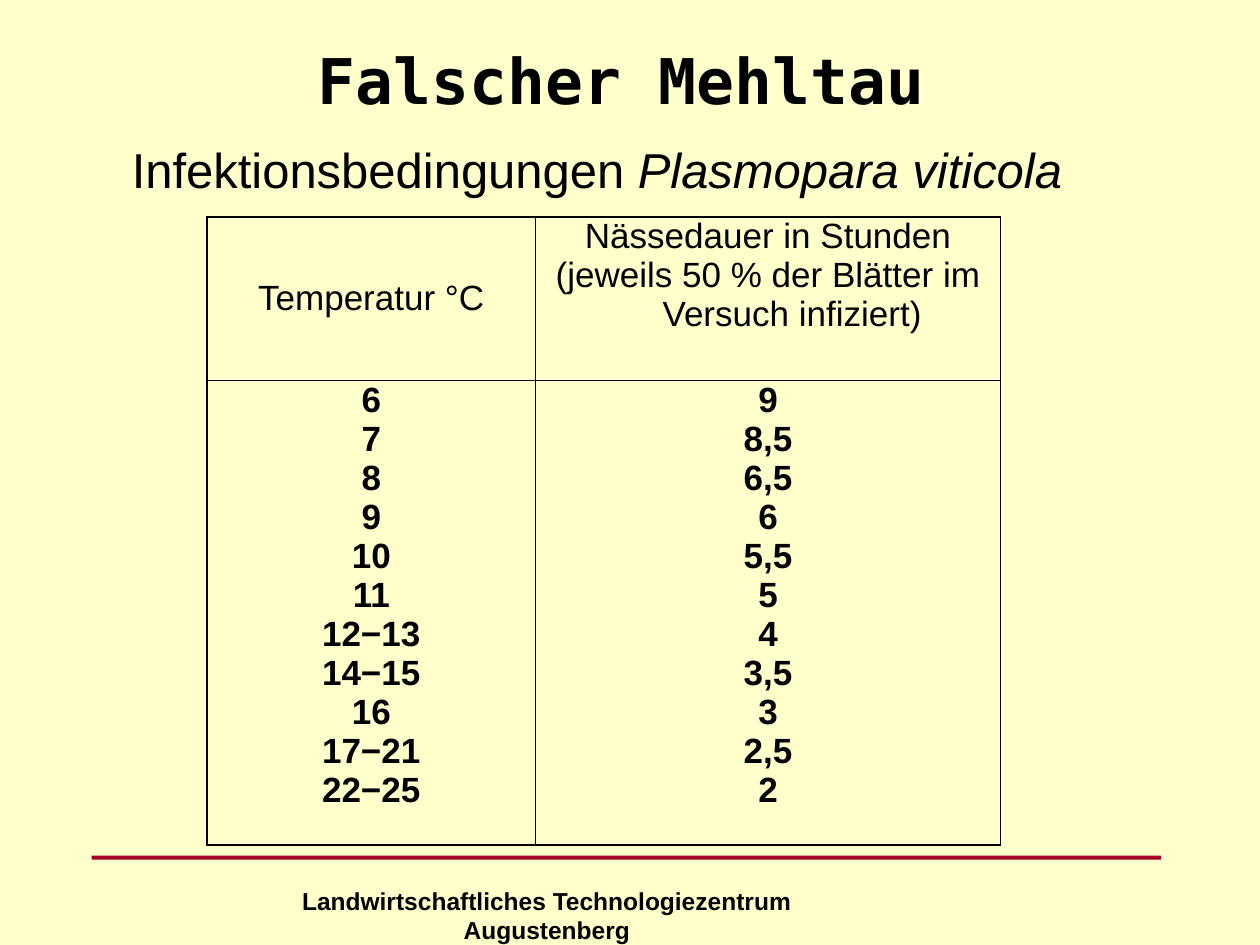
from lxml.etree import SubElement
from pptx import Presentation
from pptx.dml.color import RGBColor
from pptx.enum.shapes import MSO_SHAPE
from pptx.enum.text import MSO_ANCHOR, PP_ALIGN
from pptx.oxml import parse_xml
from pptx.oxml.ns import nsdecls
from pptx.util import Cm, Pt

COLORS = {"back": "FFFFCC", "rule": "A50021", "ink": "000000"}

TITLE = "Falscher Mehltau"
TOPIC = [("Infektionsbedingungen ", {}), ("Plasmopara viticola ", {"italic": True})]
FOOTER = "Landwirtschaftliches Technologiezentrum Augustenberg"
HEADS = [
    ["Temperatur °C"],
    ["Nässedauer in Stunden", "(jeweils 50 % der Blätter im Versuch infiziert)"],
]
DATA = [
    ("6", "9"), ("7", "8,5"), ("8", "6,5"), ("9", "6"), ("10", "5,5"), ("11", "5"),
    ("12−13", "4"), ("14−15", "3,5"), ("16", "3"), ("17−21", "2,5"), ("22−25", "2"),
]

# left, top, width, height in cm
PLACES = {
    "rule": (1.85, 17.25, 21.56, 0.08),
    "footer": (5.84, 17.73, 13.82, 0.84),
    "table": (4.17, 4.37, 16, 12.67),
    "topic": (1.17, 2.69, 22, 1.45),
    "title": (1.7, 0, 21.64, 3.2),
}
COLS = (6.63, 9.37)
ROWS = (3.3, 9.37)
HANG = Cm(0.97)

FORMATS = {
    "title": {"name": "DejaVu Sans Mono", "size": Pt(36), "bold": True},
    "topic": {"name": "Arial", "size": Pt(28), "bold": False},
    "head": {"name": "Arial", "size": Pt(20), "bold": False},
    "data": {"name": "Arial", "size": Pt(20), "bold": True},
    "footer": {"name": "Arial", "size": Pt(14), "bold": True},
}
NO_INSET = {f"margin_{side}": 0 for side in ("left", "top", "right", "bottom")}


def put(target, values):
    for name, value in values.items():
        setattr(target, name, value)


def place(name):
    return [Cm(n) for n in PLACES[name]]


def color(name):
    return RGBColor.from_string(COLORS[name])


def write(para, runs, style):
    para.alignment = PP_ALIGN.CENTER
    for text, extra in runs:
        run = para.add_run()
        run.text = text
        put(run.font, FORMATS[style] | extra)
        run.font.color.rgb = color("ink")


def add_text(slide, name, runs, **frame):
    box = slide.shapes.add_textbox(*place(name)).text_frame
    put(box, {"word_wrap": True} | frame)
    write(box.paragraphs[0], runs, name)


def frame_cell(cell):
    """Clear the fill and draw a thin line on all four sides."""
    cell.fill.background()
    props = cell._tc.get_or_add_tcPr()
    for spot, side in enumerate("LRTB"):
        props.insert(spot, parse_xml(
            f'<a:ln{side} {nsdecls("a")} w="{Pt(1)}"><a:solidFill>'
            f'<a:srgbClr val="{COLORS["ink"]}"/></a:solidFill></a:ln{side}>'))


def fill_cell(cell, lines, style):
    put(cell, NO_INSET)
    frame_cell(cell)
    text = cell.text_frame
    for spot, line in enumerate(lines):
        para = text.add_paragraph() if spot else text.paragraphs[0]
        props = para._p.get_or_add_pPr()
        props.set("marL", str(HANG))
        props.set("indent", str(-HANG))
        write(para, [(line, {})], style)


def add_grid(slide):
    grid = slide.shapes.add_table(len(ROWS), len(COLS), *place("table")).table
    put(grid, {"first_row": False, "horz_banding": False})
    for row, high in zip(grid.rows, ROWS):
        row.height = Cm(high)
    for col, wide in zip(grid.columns, COLS):
        col.width = Cm(wide)
    for col, (head, data) in enumerate(zip(HEADS, zip(*DATA))):
        fill_cell(grid.cell(0, col), head, "head")
        fill_cell(grid.cell(1, col), data, "data")
    grid.cell(0, 0).vertical_anchor = MSO_ANCHOR.MIDDLE


def main():
    deck = Presentation()
    put(deck, {"slide_width": Cm(25.4), "slide_height": Cm(19.05)})
    slide = deck.slides.add_slide(deck.slide_layouts[6])
    back = slide.background.fill
    back.solid()
    back.fore_color.rgb = color("back")

    rule = slide.shapes.add_shape(MSO_SHAPE.RECTANGLE, *place("rule"))
    rule.shadow.inherit = False
    rule.fill.solid()
    rule.fill.fore_color.rgb = color("rule")
    rule.line.fill.background()

    add_text(slide, "footer", [(FOOTER, {})], margin_left=0, margin_right=Cm(3.45))
    add_grid(slide)
    add_text(slide, "topic", TOPIC)
    add_text(slide, "title", [(TITLE, {})], vertical_anchor=MSO_ANCHOR.MIDDLE)
    deck.save("out.pptx")


if __name__ == "__main__":
    main()
